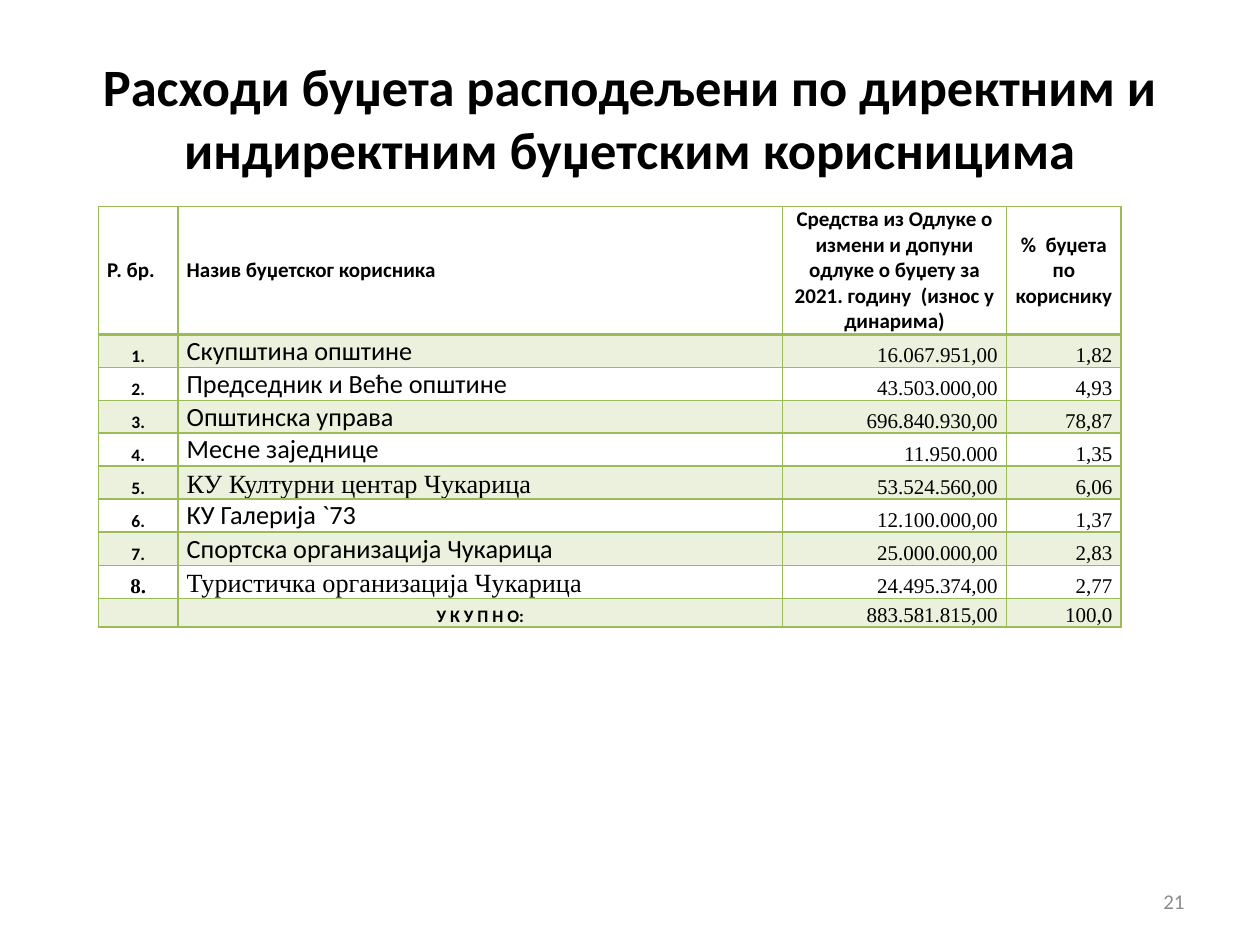
from lxml import etree
from pptx import Presentation
from pptx import util as u
from pptx.dml import color
from pptx.enum import text
from pptx.oxml import ns

COLORS = {"ink": "000000", "green": "9BBB59", "muted": "8C8C8C"}
SANS, SERIF = "Calibri", "Times New Roman"
LEFT, CENTER, RIGHT = text.PP_ALIGN.LEFT, text.PP_ALIGN.CENTER, text.PP_ALIGN.RIGHT
MIDDLE, BOTTOM = text.MSO_ANCHOR.MIDDLE, text.MSO_ANCHOR.BOTTOM

TITLE = "Расходи буџета расподељени по директним и индиректним буџетским корисницима"
HEADINGS = [
    ("Р. бр.", LEFT),
    ("Назив буџетског корисника", LEFT),
    ("Средства из Одлуке о измени и допуни одлуке о буџету за 2021. годину  (износ у динарима)", CENTER),
    ("%  буџета по кориснику", CENTER),
]
USERS = [
    ("Скупштина општине", "16.067.951,00", "1,82"),
    ("Председник и Веће општине", "43.503.000,00", "4,93"),
    ("Општинска управа", "696.840.930,00", "78,87"),
    ("Месне заједнице", "11.950.000", "1,35"),
    ("КУ Културни центар Чукарица", "53.524.560,00", "6,06"),
    ("КУ Галерија `73", "12.100.000,00", "1,37"),
    ("Спортска организација Чукарица", "25.000.000,00", "2,83"),
    ("Туристичка организација Чукарица", "24.495.374,00", "2,77"),
]
TOTAL = ("У К У П Н О:", "883.581.815,00", "100,0")
SERIF_NAMES = {5, 8}
SERIF_NUMBERS = {8}
COLUMN_WIDTHS = [45.5, 345.5, 128, 65.5]
ROW_HEIGHTS = [45.5] + [18.8] * 6 + [19.2, 18.8, 16.5]


def style(size, name=SANS, bold=False):
    """Return the font values for one kind of text."""
    return {"size": u.Pt(size), "name": name, "bold": bold}


def write(frame, words, align, font, ink="ink"):
    """Put one formatted paragraph into a text frame."""
    para = frame.paragraphs[0]
    para.alignment = align
    span = para.add_run()
    span.text = words
    for key, value in font.items():
        setattr(span.font, key, value)
    span.font.color.rgb = color.RGBColor.from_string(COLORS[ink])


def tint(cell):
    """Fill a cell with green at 20 % opacity."""
    cell.fill.solid()
    cell.fill.fore_color.rgb = color.RGBColor.from_string(COLORS["green"])
    shade = cell._tc.tcPr.find(".//" + ns.qn("a:srgbClr"))
    etree.SubElement(shade, ns.qn("a:alpha"), val="20000")


def outline(cell, widths):
    """Draw the left, right, top and bottom borders of a cell."""
    props = cell._tc.get_or_add_tcPr()
    for index, (side, width) in enumerate(zip("LRTB", widths)):
        line = etree.Element(ns.qn(f"a:ln{side}"), w=str(u.Pt(width)))
        fill = etree.SubElement(line, ns.qn("a:solidFill"))
        etree.SubElement(fill, ns.qn("a:srgbClr"), val=COLORS["green"])
        props.insert(index, line)


def table_rows():
    """List every row as cells of words, alignment and font."""
    bold = style(12, bold=True)
    amount = style(12, SERIF)
    rows = [[(words, align, bold) for words, align in HEADINGS]]
    for number, (name, funds, share) in enumerate(USERS, 1):
        number_font = style(12, SERIF, True) if number in SERIF_NUMBERS else style(10, bold=True)
        name_font = style(15, SERIF if number in SERIF_NAMES else SANS)
        rows.append([(f"{number}.", CENTER, number_font), (name, LEFT, name_font),
                     (funds, RIGHT, amount), (share, RIGHT, amount)])
    small = style(10, bold=True)
    name, funds, share = TOTAL
    rows.append([("", CENTER, small), (name, CENTER, small),
                 (funds, RIGHT, amount), (share, RIGHT, amount)])
    return rows


def add_title(page, left, top, width, height):
    """Place the slide title in its box."""
    title = page.shapes.title
    place = {"left": left, "top": top, "width": width, "height": height}
    for key, value in place.items():
        setattr(title, key, u.Pt(value))
    title.text_frame.auto_size = text.MSO_AUTO_SIZE.NONE
    title.text_frame.vertical_anchor = MIDDLE
    write(title.text_frame, TITLE, CENTER, style(30, bold=True))


def add_budget_table(page, left, top, width, height):
    """Place the table of budget users in its box."""
    rows = table_rows()
    box = page.shapes.add_table(len(rows), len(HEADINGS), *map(u.Pt, (left, top, width, height)))
    table = box.table
    for column, share in zip(table.columns, COLUMN_WIDTHS):
        column.width = u.Pt(width * share / sum(COLUMN_WIDTHS))
    for row, size in zip(table.rows, ROW_HEIGHTS):
        row.height = u.Pt(size)
    for r, row in enumerate(rows):
        for c, (words, align, font) in enumerate(row):
            cell = table.cell(r, c)
            layout = {"margin_left": u.Pt(5), "margin_right": u.Pt(5), "margin_top": 0,
                      "margin_bottom": 0, "vertical_anchor": BOTTOM if r else MIDDLE}
            for key, value in layout.items():
                setattr(cell, key, value)
            if words:
                write(cell.text_frame, words, align, font)
            else:
                para = cell.text_frame.paragraphs[0]
                etree.SubElement(para._p, ns.qn("a:endParaRPr"), sz=str(int(font["size"].pt * 100)))
            if r % 2:
                tint(cell)
            else:
                cell.fill.background()
            outline(cell, (1, 1, 2 if r == 1 else 1, 1 if r else 2))
    box.height = u.Pt(height)


def add_page_number(page, left, top, width, height):
    """Place the page number in its box."""
    box = page.shapes.add_textbox(*map(u.Pt, (left, top, width, height)))
    box.text_frame.word_wrap = True
    box.text_frame.vertical_anchor = MIDDLE
    write(box.text_frame, "21", RIGHT, style(12), "muted")


def main():
    """Build the slide and save it."""
    deck = Presentation()
    deck.slide_width, deck.slide_height = u.Pt(720), u.Pt(540)
    page = deck.slides.add_slide(deck.slide_layouts[5])
    add_title(page, 36, 21.6, 648, 90)
    add_budget_table(page, 56.2, 118, 584.5, 240.5)
    add_page_number(page, 516, 500.5, 168, 28.8)
    deck.save("out.pptx")


if __name__ == "__main__":
    main()
